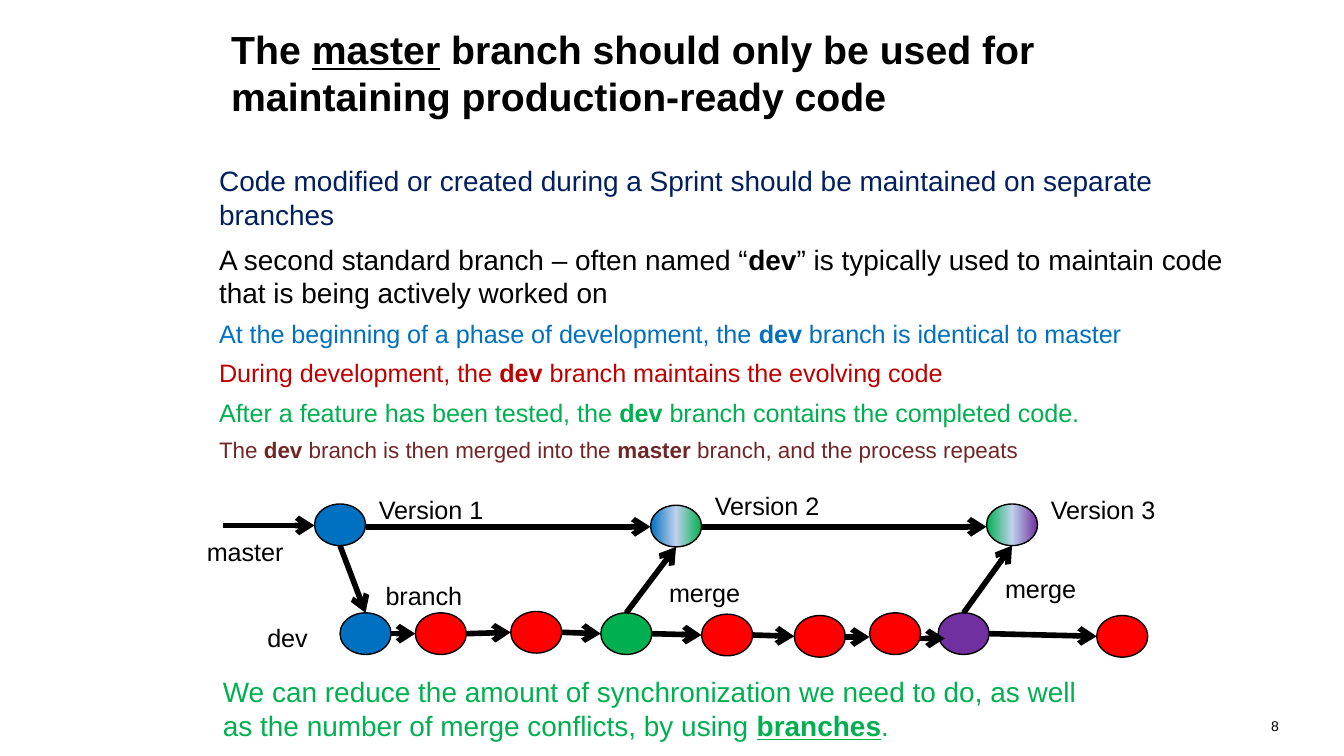
"""Build a slide on keeping the master branch for production-ready code."""
import copy

import pptx
import pptx.dml.color
import pptx.enum.shapes
import pptx.enum.text
import pptx.oxml.ns
import pptx.util
from pptx.util import Inches

COLORS = {"black": "000000", "navy": "002060", "blue": "0070C0", "crimson": "C00000",
          "green": "00B050", "brown": "712627", "red": "FF0000", "purple": "7030A0",
          "pale": "BFD2EC"}

TITLE = ["The ", "master", " branch should only be used for maintaining production-ready code"]
BODY = [
    (0, 15, 6, "navy", ["Code modified or created during a Sprint should be maintained on separate branches"]),
    (0, 15, 6, "black", ["A second standard branch – often named “", "dev",
                         "” is typically used to maintain code that is being actively worked on"]),
    (1, 13.5, 4.8, "blue", ["At the beginning of a phase of development, the ", "dev",
                            " branch is identical to master"]),
    (1, 13.5, 4.8, "crimson", ["During development, the ", "dev", " branch maintains the evolving code"]),
    (1, 13.5, 4.8, "green", ["After a feature has been tested, the ", "dev",
                             " branch contains the completed code."]),
    (2, 12, 4.8, "brown", ["The ", "dev", " branch is then merged into the ", "master",
                           " branch, and the process repeats"]),
]
SUMMARY = ["We can reduce the amount of synchronization we need to do, as well as the number "
           "of merge conflicts, by using ", "branches", "."]
LABELS = [("master", 1.44, 3.94, 0.78), ("dev", 1.89, 4.58, 0.51), ("branch", 2.77, 4.27, 0.78),
          ("merge", 4.88, 4.25, 0.74), ("merge", 7.38, 4.22, 0.74), ("Version 1", 2.72, 3.63, 1),
          ("Version 2", 5.22, 3.6, 1), ("Version 3", 7.72, 3.63, 1)]
NODE_W, NODE_H = 0.38, 0.31
MASTER = [(2.34, 3.75, ["blue"]), (4.84, 3.76, ["blue", "pale", "green"]),
          (7.34, 3.75, ["green", "pale", "purple"])]
DEV = [(2.53, 4.56, ["blue"]), (3.09, 4.56, ["red"]), (3.8, 4.55, ["red"]),
       (4.47, 4.56, ["green"]), (5.22, 4.57, ["red"]), (5.91, 4.58, ["red"]),
       (6.47, 4.56, ["red"]), (6.98, 4.56, ["purple"]), (8.16, 4.58, ["red"])]
MASTER_Y = 3.92
DEV_ARROWS = {5: ((6.28, 4.74), (6.47, 4.74)), 6: ((6.84, 4.75), (7.03, 4.75))}


def rgb(name):
    return pptx.dml.color.RGBColor.from_string(COLORS[name])


def set_frame(tf, **formats):
    for name, value in {"word_wrap": True, "auto_size": pptx.enum.text.MSO_AUTO_SIZE.NONE,
                        **formats}.items():
        setattr(tf, name, value)


def margins(size):
    return {f"margin_{side}": Inches(size) for side in ("left", "right", "top", "bottom")}


def write(p, segments, size, color, emphasis=None, bold=False):
    p.alignment = pptx.enum.text.PP_ALIGN.LEFT
    for i, segment in enumerate(segments):
        r = p.add_run()
        r.text = segment
        formats = {"name": "Arial", "size": pptx.util.Pt(size), "bold": bold}
        if i % 2:
            formats.update(emphasis)
        for name, value in formats.items():
            setattr(r.font, name, value)
        r.font.color.rgb = rgb(color)


def place(sp, *box):
    for name, value in zip(("left", "top", "width", "height"), box):
        setattr(sp, name, Inches(value))


def add_node(shapes, left, top, fills):
    sp = shapes.add_shape(pptx.enum.shapes.MSO_SHAPE.OVAL, *map(Inches, (left, top, NODE_W, NODE_H)))
    sp.shadow.inherit = False
    sp.line.color.rgb = rgb("black")
    sp.line.width = pptx.util.Pt(0.75)
    if len(fills) == 1:
        sp.fill.solid()
        sp.fill.fore_color.rgb = rgb(fills[0])
        return
    sp.fill.gradient()
    sp.fill.gradient_angle = 0
    stops = sp._element.spPr.find(".//" + pptx.oxml.ns.qn("a:gsLst"))
    stops.append(copy.deepcopy(stops[0]))
    for i, (stop, fill) in enumerate(zip(sp.fill.gradient_stops, fills)):
        stop.position = i / 2
        stop.color.rgb = rgb(fill)


def add_arrow(shapes, start, end):
    line = shapes.add_connector(pptx.enum.shapes.MSO_CONNECTOR.STRAIGHT, *map(Inches, (*start, *end)))
    line.line.color.rgb = rgb("black")
    line.line.width = pptx.util.Pt(3)
    props = line._element.spPr
    tail = pptx.oxml.ns.qn("a:tailEnd")
    props.get_or_add_ln().append(props.makeelement(tail, {"type": "arrow"}))
    props.append(props.makeelement(pptx.oxml.ns.qn("a:effectLst"), {}))


def side(node, x, y):
    return node[0] + x * NODE_W, node[1] + y * NODE_H


def add_text(shapes, box, segments, size, color, emphasis=None, **formats):
    tf = shapes.add_textbox(*map(Inches, box)).text_frame
    set_frame(tf, **formats)
    write(tf.paragraphs[0], segments, size, color, emphasis)
    return tf


def main():
    prs = pptx.Presentation()
    prs.slide_width = Inches(10)
    prs.slide_height = prs.slide_width * 9 // 16
    s = prs.slides.add_slide(prs.slide_layouts[1])

    title, body = s.shapes.title, s.placeholders[1]
    place(title, 1.62, 0.1, 6.19, 0.89)
    set_frame(title.text_frame, vertical_anchor=pptx.enum.text.MSO_ANCHOR.BOTTOM, **margins(0.1))
    write(title.text_frame.paragraphs[0], TITLE, 21, "black", {"underline": True}, bold=True)

    place(body, 1.53, 1.12, 7.71, 2.47)
    tf = body.text_frame
    set_frame(tf, **margins(0.1))
    for i, (level, size, before, color, segments) in enumerate(BODY):
        p = tf.add_paragraph() if i else tf.paragraphs[0]
        p.level = level
        p.space_before = pptx.util.Pt(before)
        write(p, segments, size, color, {"bold": True})
        props = p._p.get_or_add_pPr()
        props.set("marL", "0")
        props.set("indent", "0")
        props.append(props.makeelement(pptx.oxml.ns.qn("a:buNone"), {}))

    add_text(s.shapes, (9.36, 5.19, 0.6, 0.43), ["8"], 7.5, "black",
             vertical_anchor=pptx.enum.text.MSO_ANCHOR.MIDDLE, **margins(0.1))

    shapes = s.shapes.add_group_shape().shapes
    for node in MASTER + DEV:
        add_node(shapes, *node)
    arrows = [((1.66, 3.91), (MASTER[0][0], 3.91)),
              (side(MASTER[0], 0.5, 1), side(DEV[0], 0.5, 0)),
              (side(DEV[3], 0.5, 0), side(MASTER[1], 0.5, 1)),
              (side(DEV[7], 0.5, 0), side(MASTER[2], 0.5, 1))]
    arrows += [((a[0] + NODE_W, MASTER_Y), (b[0], MASTER_Y)) for a, b in zip(MASTER, MASTER[1:])]
    arrows += [DEV_ARROWS.get(i, (side(a, 1, 0.5), side(b, 0, 0.5)))
               for i, (a, b) in enumerate(zip(DEV, DEV[1:]))]
    for start, end in arrows:
        add_arrow(shapes, start, end)
    for text, left, top, width in LABELS:
        add_text(shapes, (left, top, width, 0.33), [text], 13.5, "black", word_wrap=False,
                 auto_size=pptx.enum.text.MSO_AUTO_SIZE.SHAPE_TO_FIT_TEXT)

    tf = add_text(s.shapes, (1.56, 4.97, 6.75, 0.65), SUMMARY, 15, "green",
                  {"bold": True, "underline": True})
    tf.paragraphs[0].space_before = pptx.util.Pt(3)
    prs.save("out.pptx")


if __name__ == "__main__":
    main()
